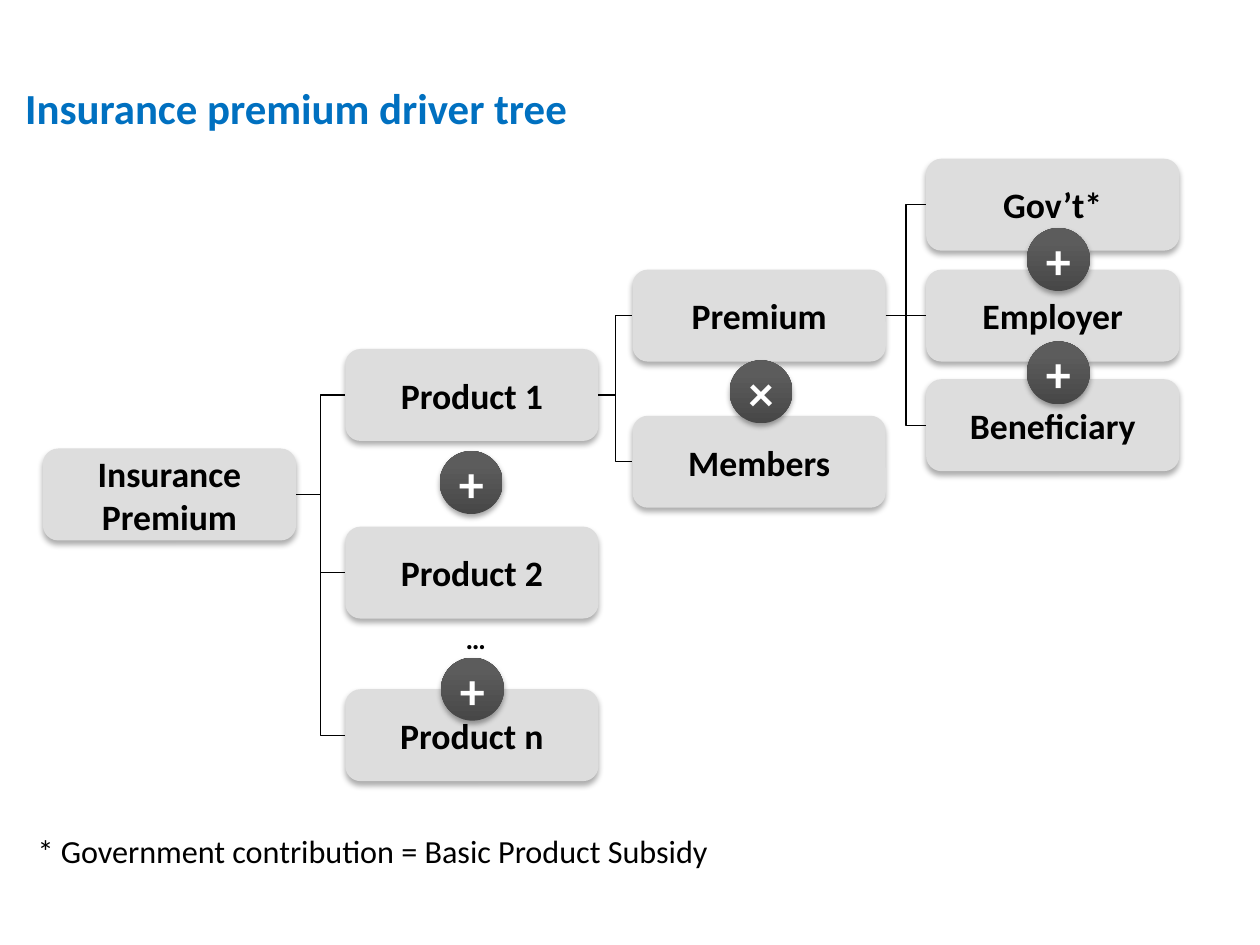
from dataclasses import dataclass

from lxml import etree
from pptx import Presentation
from pptx import util as u
from pptx.dml.color import RGBColor
from pptx.enum import shapes, text
from pptx.oxml import ns

TITLE = "Insurance premium driver tree"
FOOTNOTE = "* Government contribution = Basic Product Subsidy"

# Each column of the tree: left edge, then the top of every box in it
COLUMNS = [
    (0.34, {"Insurance Premium": 3.56}),
    (2.74, {"Product 1": 2.77, "Product 2": 4.18, "Product n": 5.47}),
    (5.02, {"Premium": 2.14, "Members": 3.3}),
    (7.35, {"Gov’t*": 1.26, "Employer": 2.14, "Beneficiary": 3.01}),
]
BRANCHES = {
    "Insurance Premium": ["Product 1", "Product 2", "Product n"],
    "Product 1": ["Premium", "Members"],
    "Premium": ["Gov’t*", "Employer", "Beneficiary"],
}
# Symbol, centre across, centre down
OPERATORS = [
    ("+", 8.4, 2.06),
    ("×", 6.04, 3.11),
    ("+", 8.4, 2.96),
    ("+", 3.74, 3.83),
    ("+", 3.75, 5.47),
]
BOX_WIDTH, BOX_HEIGHT, DISC = 2.01, 0.73, 0.5
LEFT_SIDE, RIGHT_SIDE = 1, 3  # connection sites of a rounded rectangle


@dataclass(frozen=True)
class Theme:
    font: str = "Calibri"
    title: str = "0070C0"
    ink: str = "000000"
    white: str = "FFFFFF"
    box: str = "DDDDDD"
    disc_dark: str = "474747"
    disc_light: str = "5C5C5C"
    title_size: float = 24.5
    box_size: float = 20.4
    note_size: float = 18.4
    operator_size: float = 28.6
    dots_size: float = 16.3


THEME = Theme()


def write(shape, content, size, color=THEME.ink, bold=True, inset=None, wrap=True,
          align=text.PP_ALIGN.CENTER, anchor=text.MSO_ANCHOR.MIDDLE):
    frame = shape.text_frame
    frame.word_wrap = wrap
    frame.vertical_anchor = anchor
    if inset is not None:
        frame.margin_left = frame.margin_right = u.Inches(inset)
        frame.margin_top = frame.margin_bottom = u.Inches(inset)
    paragraph = frame.paragraphs[0]
    paragraph.text = content
    paragraph.alignment = align
    font = paragraph.font
    font.name, font.size, font.bold = THEME.font, u.Pt(size), bold
    font.color.rgb = RGBColor.from_string(color)


def add_shadow(shape, opacity, blur, distance):
    """Cast a soft black shadow straight down; blur and distance in points."""
    shape.shadow.inherit = False
    effects = shape._element.spPr.find(ns.qn("a:effectLst"))
    outer = etree.SubElement(effects, ns.qn("a:outerShdw"), blurRad=str(u.Pt(blur)),
                             dist=str(u.Pt(distance)), dir="5400000", rotWithShape="0")
    color = etree.SubElement(outer, ns.qn("a:srgbClr"), val=THEME.ink)
    etree.SubElement(color, ns.qn("a:alpha"), val=str(opacity * 1000))


def add_box(slide, label, left, top):
    box = slide.shapes.add_shape(
        shapes.MSO_SHAPE.ROUNDED_RECTANGLE,
        *map(u.Inches, (left, top, BOX_WIDTH, BOX_HEIGHT)))
    box.fill.solid()
    box.fill.fore_color.rgb = RGBColor.from_string(THEME.box)
    box.line.fill.background()
    add_shadow(box, 32, 3.5, 2.2)
    write(box, label, THEME.box_size)
    return box


def add_branch(slide, parent, child):
    branch = slide.shapes.add_connector(shapes.MSO_CONNECTOR.ELBOW, 0, 0, 0, 0)
    branch.begin_connect(parent, RIGHT_SIDE)
    branch.end_connect(child, LEFT_SIDE)
    branch.line.width = u.Pt(0.75)
    branch.line.color.rgb = RGBColor.from_string(THEME.ink)
    etree.SubElement(branch._element.spPr, ns.qn("a:effectLst"))


def add_operator(slide, symbol, center_x, center_y):
    disc = slide.shapes.add_shape(
        shapes.MSO_SHAPE.OVAL,
        *map(u.Inches, (center_x - DISC / 2, center_y - DISC / 2, DISC, DISC)))
    disc.fill.gradient()
    disc.fill.gradient_angle = 90
    stops = [(0, THEME.disc_dark), (0.8, THEME.disc_light)]
    for stop, (position, color) in zip(disc.fill.gradient_stops, stops):
        stop.position = position
        stop.color.rgb = RGBColor.from_string(color)
    disc.line.fill.background()
    add_shadow(disc, 35, 3.1, 1.8)
    write(disc, symbol, THEME.operator_size, color=THEME.white, inset=0, wrap=False)


def add_text(slide, content, area, size, **style):
    box = slide.shapes.add_textbox(*map(u.Inches, area))
    write(box, content, size, anchor=text.MSO_ANCHOR.TOP, **style)


def main():
    presentation = Presentation()
    presentation.slide_width, presentation.slide_height = u.Inches(10), u.Inches(7.5)
    slide = presentation.slides.add_slide(presentation.slide_layouts[5])

    title = slide.shapes.title
    title.left, title.top, title.width, title.height = map(
        u.Inches, (0.2, 0.65, 9.11, 0.41))
    write(title, TITLE, THEME.title_size, color=THEME.title, inset=0,
          align=text.PP_ALIGN.LEFT, anchor=text.MSO_ANCHOR.TOP)
    add_text(slide, FOOTNOTE, (0.2, 6.55, 9.49, 0.42), THEME.note_size,
             bold=False, align=text.PP_ALIGN.LEFT)

    boxes = {label: add_box(slide, label, left, top)
             for left, rows in COLUMNS for label, top in rows.items()}
    for parent, children in BRANCHES.items():
        for child in children:
            add_branch(slide, boxes[parent], boxes[child])
    for operator in OPERATORS:
        add_operator(slide, *operator)
    add_text(slide, "…", (3.23, 4.88, 1.09, 0.38), THEME.dots_size)

    presentation.save("out.pptx")


if __name__ == "__main__":
    main()
